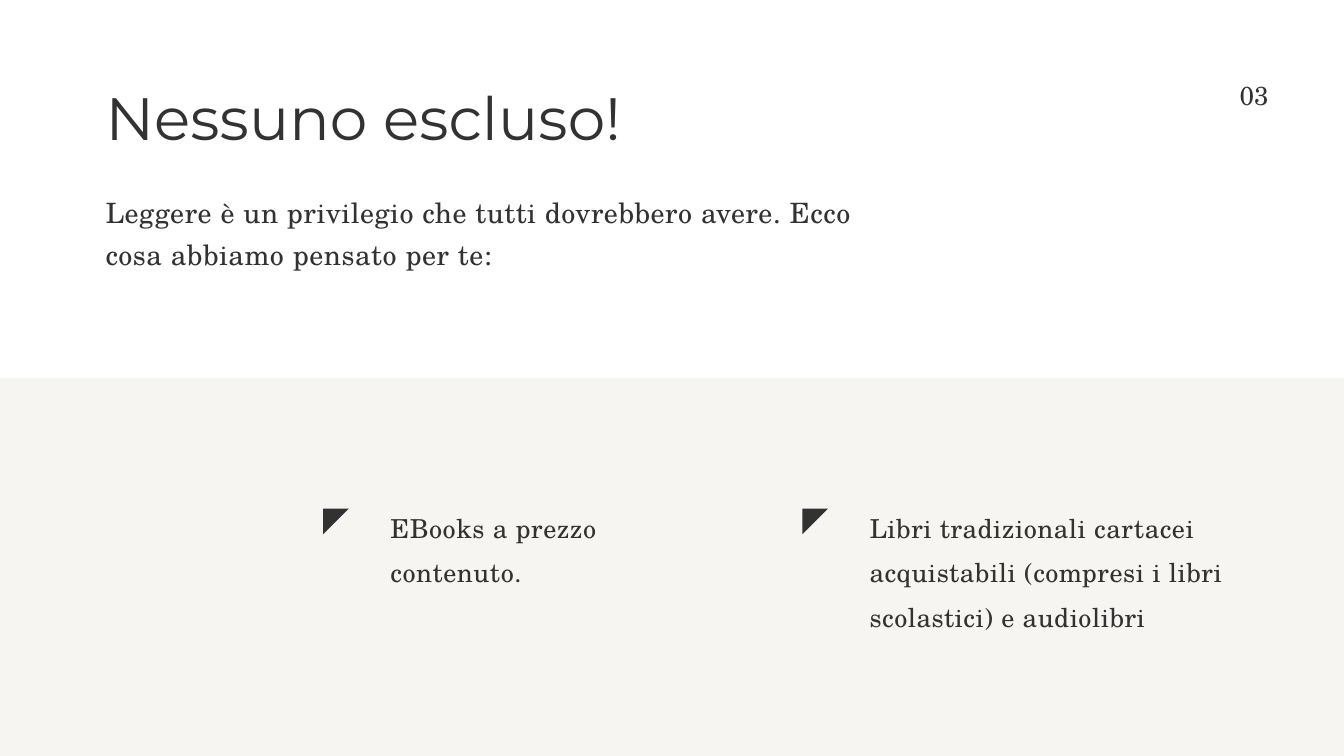
from pptx import Presentation
from pptx.dml.color import RGBColor
from pptx.enum.shapes import MSO_SHAPE
from pptx.enum.text import MSO_ANCHOR, MSO_AUTO_SIZE, PP_ALIGN
from pptx.oxml.ns import qn
from pptx.util import Inches, Pt
from lxml import etree

INK = RGBColor(0x32, 0x32, 0x32)
SAND = RGBColor(0xD5, 0xCD, 0xC0)

HEADING_FONT = "Montserrat"
BODY_FONT = "TeX Gyre Schola"

RECTANGLE = MSO_SHAPE.RECTANGLE
RIGHT_TRIANGLE = MSO_SHAPE.RIGHT_TRIANGLE
LEFT, RIGHT = PP_ALIGN.LEFT, PP_ALIGN.RIGHT
TOP = MSO_ANCHOR.TOP
NO_AUTOFIT = MSO_AUTO_SIZE.NONE

TWO_CONTENT_LAYOUT = 3
COLUMNS = 20
ROWS = 11.25

ITEMS = [
    ("EBooks a prezzo contenuto.", 4.68),
    ("Libri tradizionali cartacei acquistabili "
     "(compresi i libri scolastici) e audiolibri", 5.31),
]
FIRST_ITEM_COLUMN = 4.81
ITEM_STEP = 7.13


class SlideBuilder:
    """Holds the style and the slide; lengths are grid columns and rows."""

    def __init__(self, presentation):
        self.column = presentation.slide_width / COLUMNS
        self.row = presentation.slide_height / ROWS
        layout = presentation.slide_layouts[TWO_CONTENT_LAYOUT]
        self.slide = presentation.slides.add_slide(layout)
        self.shapes = self.slide.shapes

    def box(self, left, top, width, height):
        return (round(left * self.column), round(top * self.row),
                round(width * self.column), round(height * self.row))

    def set_text(self, shape, box, text, size, leading,
                 font=BODY_FONT, tracking=0.6, align=LEFT):
        """Place a text shape and format its single paragraph."""
        shape.left, shape.top, shape.width, shape.height = self.box(*box)
        frame = shape.text_frame
        frame.margin_left = frame.margin_right = 0
        frame.margin_top = frame.margin_bottom = 0
        frame.word_wrap = True
        frame.auto_size = NO_AUTOFIT
        frame.vertical_anchor = TOP
        frame.text = text
        paragraph = frame.paragraphs[0]
        paragraph.alignment = align
        paragraph.line_spacing = Pt(leading)
        paragraph.space_before = Pt(0)
        for run in paragraph.runs:
            run.font.name = font
            run.font.size = Pt(size)
            run.font.color.rgb = INK
            run.font._element.set("spc", str(round(tracking * 100)))
        return paragraph

    def title(self, box, text):
        self.set_text(self.shapes.title, box, text, 64, 89.6,
                      HEADING_FONT, 0.2)

    def text(self, box, text, size, leading, **style):
        textbox = self.shapes.add_textbox(*self.box(*box))
        self.set_text(textbox, box, text, size, leading, **style)

    def item(self, index, box, text):
        """Fill a body placeholder, without its own bullet."""
        body = self.slide.placeholders[index]
        paragraph = self.set_text(body, box, text, 28, 47.6)
        properties = paragraph._element.get_or_add_pPr()
        properties.set("marL", "0")
        properties.set("indent", "0")
        etree.SubElement(properties, qn("a:buNone"))

    def filled_shape(self, kind, box, color):
        shape = self.shapes.add_shape(kind, *self.box(*box))
        shape.shadow.inherit = False
        shape.fill.solid()
        shape.fill.fore_color.rgb = color
        shape.line.fill.background()
        return shape

    def band(self, box, opacity):
        """Draw a translucent band behind everything else."""
        band = self.filled_shape(RECTANGLE, box, SAND)
        color = band.element.spPr.find(qn("a:solidFill"))[0]
        etree.SubElement(color, qn("a:alpha"), val=str(opacity * 1000))
        band.element.getparent().insert(2, band.element)

    def marker(self, left, top, side):
        marker = self.filled_shape(RIGHT_TRIANGLE, (left, top, side, side), INK)
        marker.rotation = 90


def main():
    presentation = Presentation()
    presentation.slide_width = Inches(20)
    presentation.slide_height = Inches(11.25)

    builder = SlideBuilder(presentation)
    builder.band((0, ROWS / 2, COLUMNS, ROWS / 2), opacity=20)
    builder.title((1.57, 1.02, 13.16, 1.16), "Nessuno escluso!")
    builder.text((1.57, 2.78, 11.81, 1.2),
                 "Leggere è un privilegio che tutti dovrebbero avere. "
                 "Ecco cosa abbiamo pensato per te:", 30, 45)
    for number, (text, width) in enumerate(ITEMS):
        left = FIRST_ITEM_COLUMN + number * ITEM_STEP
        builder.marker(left, 7.57, 0.38)
        builder.item(number + 1, (left + 1, 7.43, width, 1.97), text)
    builder.text((17.74, 1.1, 1.14, 0.48), "03", 28, 39.2,
                 tracking=0, align=RIGHT)

    presentation.save("out.pptx")


if __name__ == "__main__":
    main()
